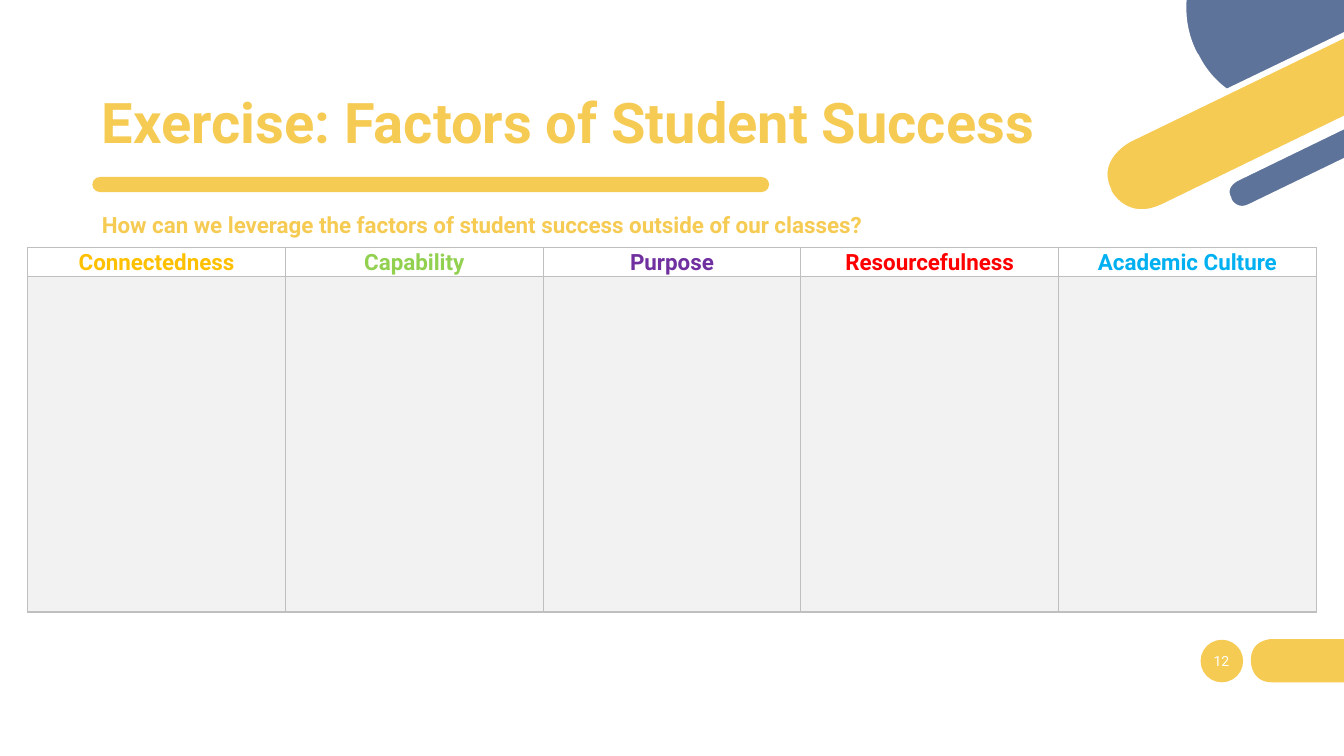
from dataclasses import dataclass

from lxml.etree import SubElement
from pptx import Presentation
from pptx.dml.color import RGBColor as RGB
from pptx.enum.shapes import MSO_SHAPE as SHAPE
from pptx.enum.text import MSO_ANCHOR as ANCHOR, MSO_AUTO_SIZE as AUTOSIZE, PP_ALIGN as ALIGN
from pptx.oxml import parse_xml
from pptx.oxml.ns import nsdecls, qn
from pptx.util import Pt


@dataclass(frozen=True)
class Theme:
    """Colours, font and type sizes of the slide."""
    font: str = "Roboto"
    yellow: str = "F6CB53"
    blue: str = "5D739A"
    white: str = "FFFFFF"
    cell: str = "F2F2F2"
    border: str = "BFBFBF"
    title: int = 40
    body: int = 16
    number: int = 10


T = Theme()
FACTORS = {
    "Connectedness": "FFC000",
    "Capability": "92D050",
    "Purpose": "7030A0",
    "Resourcefulness": "FF0000",
    "Academic Culture": "00B0F0",
}
DISC = [(846.5, -3), [(845.3, 10.8), (846.7, 23.8), (853.9, 38.2)], (855.4, 40.3),
        [(855.4, 40.3), (861.8, 54.7), (876.2, 64.8)], (963, 23), (963, -3)]
WIDE_BAND = [(807.1, 100.1), [(807.1, 100.1), (781.2, 113), (792.7, 136.1)], (792.7, 136.8),
             [(792.7, 136.8), (804.2, 159.8), (830.9, 146.9)], (963, 82.7), (963, 24.5)]
THIN_BAND = [(883.4, 128.2), [(883.4, 128.2), (873.4, 133.2), (878.4, 141.8)], (878.4, 142.6),
             [(878.4, 142.6), (882.7, 151.9), (892.8, 146.9)], (963, 112.9), (963, 89.5)]
NUMBER_TAB = [(908.6, 456.5), [(908.6, 456.5), (893.5, 456.5), (893.5, 471.6)], (893.5, 472.3),
              [(893.5, 472.3), (893.5, 487.4), (908.6, 487.4)], (960, 487.4), (960, 456.5)]


def place(sp, left, top, width, height):
    """Move and size a shape in points."""
    sp.left, sp.top, sp.width, sp.height = Pt(left), Pt(top), Pt(width), Pt(height)


def paint(sp, color, outline=0):
    """Fill a shape, with an optional white outline."""
    sp.shadow.inherit = False
    sp.fill.solid()
    sp.fill.fore_color.rgb = RGB.from_string(color)
    if outline:
        sp.line.color.rgb = RGB.from_string(T.white)
        sp.line.width = Pt(outline)
    else:
        sp.line.fill.background()


def write(tf, text, size, color, bold=True, align=ALIGN.LEFT, spacing=0.9):
    """Write one formatted paragraph."""
    tf.text = text
    p = tf.paragraphs[0]
    p.alignment, p.line_spacing, p.space_before = align, spacing, Pt(0)
    font = p.runs[0].font
    font.name, font.size, font.bold = T.font, Pt(size), bold
    font.color.rgb = RGB.from_string(color)


def add_placeholder_text(sp, box, text, size, anchor):
    """Place a placeholder and write it without a bullet."""
    place(sp, *box)
    tf = sp.text_frame
    tf.word_wrap, tf.auto_size, tf.vertical_anchor = True, AUTOSIZE.NONE, anchor
    write(tf, text, size, T.yellow)
    pPr = tf.paragraphs[0]._p.get_or_add_pPr()
    pPr.set("marL", "0")
    pPr.set("indent", "0")
    SubElement(pPr, qn("a:buNone"))


def add_bar(s, kind, box, color):
    """Add a plain preset shape."""
    sp = s.shapes.add_shape(kind, *map(Pt, box))
    paint(sp, color)
    return sp


def bezier(start, controls, steps=16):
    """Return points along a cubic curve."""
    a, (b, c, d) = start, controls
    for i in range(1, steps + 1):
        t = i / steps
        u = 1 - t
        yield tuple(u**3 * a[k] + 3 * u * u * t * b[k] + 3 * u * t * t * c[k] + t**3 * d[k]
                    for k in (0, 1))


def add_outline(s, parts, color, outline=0):
    """Add a freeform from points and curves."""
    points = [parts[0]]
    for part in parts[1:]:
        points += bezier(points[-1], part) if isinstance(part, list) else [part]
    points = [(Pt(x), Pt(y)) for x, y in points]
    builder = s.shapes.build_freeform(*points[0])
    builder.add_line_segments(points[1:], close=True)
    paint(builder.convert_to_shape(), color, outline)


def add_borders(cell):
    """Draw a thin line on every side of a cell."""
    tcPr = cell._tc.get_or_add_tcPr()
    for i, side in enumerate("LRTB"):
        tcPr.insert(i, parse_xml(
            f'<a:ln{side} {nsdecls("a")} w="{Pt(1)}"><a:solidFill>'
            f'<a:srgbClr val="{T.border}"/></a:solidFill></a:ln{side}>'))


def add_factor_table(s, left, top, col_width, row_heights):
    """Add the table with a coloured heading per factor."""
    n = len(FACTORS)
    table = s.shapes.add_table(2, n, Pt(left), Pt(top), Pt(col_width * n),
                               Pt(sum(row_heights))).table
    table.first_row = table.horz_banding = False
    for row, height in zip(table.rows, row_heights):
        row.height = Pt(height)
    for i, (factor, color) in enumerate(FACTORS.items()):
        table.columns[i].width = Pt(col_width)
        head, space = table.cell(0, i), table.cell(1, i)
        write(head.text_frame, factor, T.body, color, align=ALIGN.CENTER, spacing=1.07)
        head.fill.background()
        space.fill.solid()
        space.fill.fore_color.rgb = RGB.from_string(T.cell)
        for cell in (head, space):
            cell.margin_left = cell.margin_right = Pt(5)
            cell.margin_top = cell.margin_bottom = 0
            add_borders(cell)


def add_page_number(s, number):
    """Add the page number on its disc beside the edge tab."""
    add_bar(s, SHAPE.OVAL, (857.6, 457, 30.4, 30.4), T.yellow)
    add_outline(s, NUMBER_TAB, T.yellow)
    tf = s.shapes.add_textbox(Pt(851), Pt(457.6), Pt(43), Pt(29)).text_frame
    tf.word_wrap, tf.vertical_anchor = True, ANCHOR.MIDDLE
    write(tf, number, T.number, T.white, bold=False, align=ALIGN.CENTER, spacing=1)


def main():
    """Build and save the slide."""
    prs = Presentation()
    prs.slide_width, prs.slide_height = Pt(960), Pt(540)
    s = prs.slides.add_slide(prs.slide_layouts[1])
    add_placeholder_text(s.shapes.title, (65.5, 61.2, 828, 53.3),
                         "Exercise: Factors of Student Success", T.title, ANCHOR.BOTTOM)
    add_placeholder_text(
        s.placeholders[1], (65.5, 149.5, 829.4, 55.4),
        "How can we leverage the factors of student success outside of our classes?",
        T.body, ANCHOR.TOP)
    rule = add_bar(s, SHAPE.ROUNDED_RECTANGLE, (66, 126.4, 483.4, 10.8), T.yellow)
    rule.adjustments[0] = 0.5
    for parts, color in ((DISC, T.blue), (WIDE_BAND, T.yellow), (THIN_BAND, T.blue)):
        add_outline(s, parts, color, outline=2.6)
    add_page_number(s, "12")
    add_factor_table(s, 19.8, 177, 184.1, (19, 239.6))
    prs.save("out.pptx")


if __name__ == "__main__":
    main()
